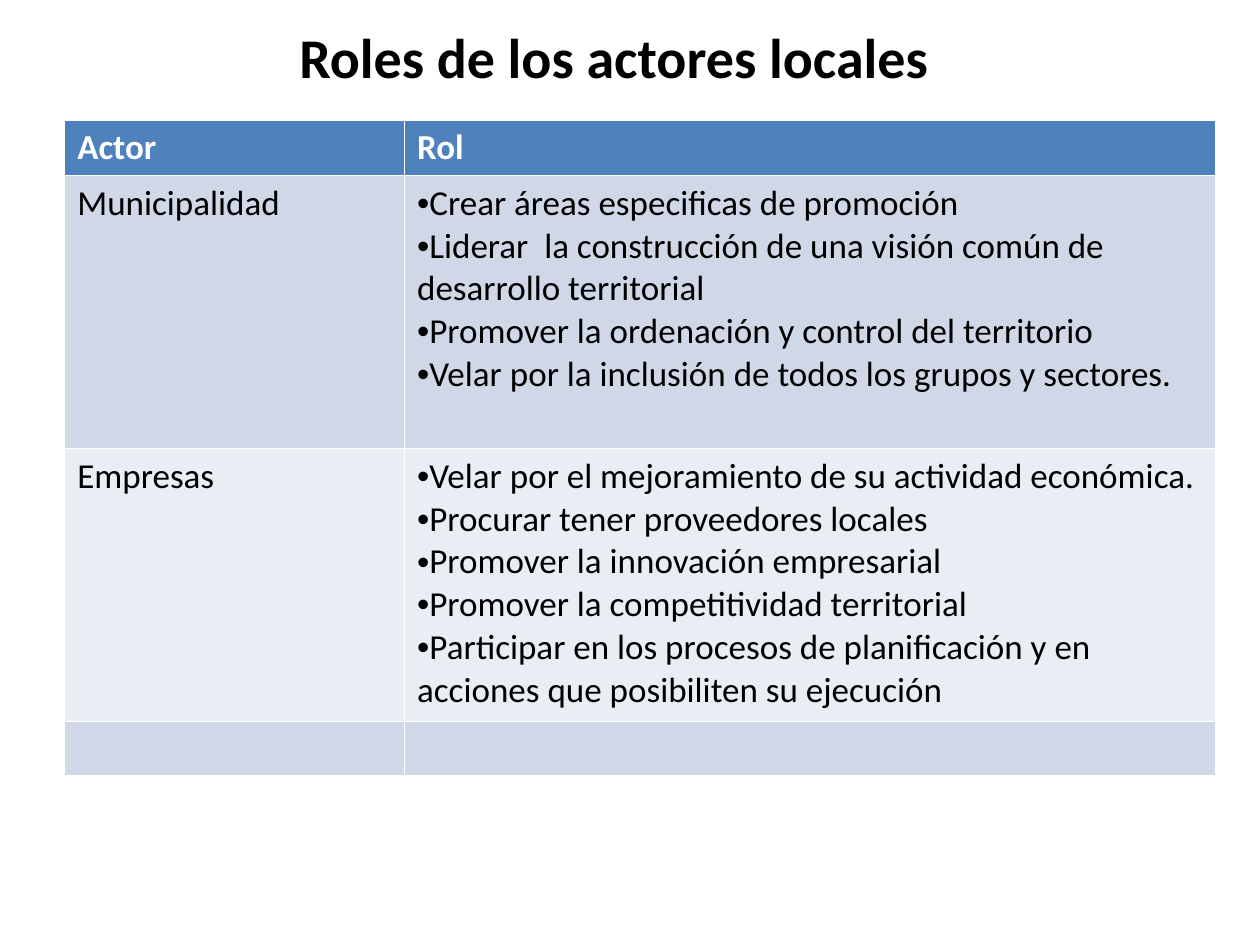
from pptx import Presentation
from pptx.dml.color import RGBColor
from pptx.enum.text import MSO_ANCHOR, PP_ALIGN
from pptx.oxml.ns import qn
from pptx.util import Pt
from lxml import etree

MIDDLE = MSO_ANCHOR.MIDDLE
CENTER = PP_ALIGN.CENTER
TITLE_ONLY = 5

THEME = {
    "font": "Calibri",
    "title": 32, "body": 20,
    "ink": "000000", "white": "FFFFFF",
    "head": "4F81BD", "bands": ("D0D8E8", "E9EDF4"),
}

TITLE = "Roles de los actores locales "
HEADS = ("Actor", "Rol")
ROLES = [
    ("Municipalidad", [
        "Crear áreas especificas de promoción",
        "Liderar  la construcción de una visión común de desarrollo territorial",
        "Promover la ordenación y control del territorio",
        "Velar por la inclusión de todos los grupos y sectores.",
    ]),
    ("Empresas", [
        "Velar por el mejoramiento de su actividad económica.",
        "Procurar tener proveedores locales",
        "Promover la innovación empresarial",
        "Promover la competitividad territorial",
        "Participar en los procesos de planificación y en  acciones que posibiliten su ejecución",
    ]),
    ("", []),
]

TITLE_BOX = (144.5, 3.5, 420, 57)
LEFT, TOP = 37, 68.6
COLS = (194.2, 463.6)
LOW, TALL = 31, 156


def add_run(para, text, size, color, bold=False):
    run = para.add_run()
    run.text = text
    font = run.font
    font.name = THEME["font"]
    font.size = Pt(size)
    font.bold = bold
    font.color.rgb = RGBColor.from_string(color)


def add_bullet(para):
    """Put a bullet right before the text, with no hanging indent."""
    props = para._p.get_or_add_pPr()
    props.set("marL", "0")
    props.set("indent", "0")
    etree.SubElement(props, qn("a:buFont")).set("typeface", "Arial")
    etree.SubElement(props, qn("a:buChar")).set("char", "•")


def fill_cell(cell, lines, fill, color, bold=False, bullets=False):
    cell.fill.solid()
    cell.fill.fore_color.rgb = RGBColor.from_string(fill)
    frame = cell.text_frame
    for i, line in enumerate(lines):
        para = frame.add_paragraph() if i else frame.paragraphs[0]
        if bullets:
            add_bullet(para)
        add_run(para, line, THEME["body"], color, bold)


def add_title(slide):
    title = slide.shapes.title
    title.left, title.top, title.width, title.height = map(Pt, TITLE_BOX)
    frame = title.text_frame
    frame.vertical_anchor = MIDDLE
    para = frame.paragraphs[0]
    para.alignment = CENTER
    add_run(para, TITLE, THEME["title"], THEME["ink"], True)


def add_roles(slide):
    highs = [LOW] + [TALL if roles else LOW for _, roles in ROLES]
    table = slide.shapes.add_table(
        len(highs), len(COLS), Pt(LEFT), Pt(TOP),
        Pt(sum(COLS)), Pt(sum(highs))).table
    for col, width in zip(table.columns, COLS):
        col.width = Pt(width)
    for row, high in zip(table.rows, highs):
        row.height = Pt(high)

    for col, head in enumerate(HEADS):
        fill_cell(table.cell(0, col), [head], THEME["head"], THEME["white"], True)
    for i, (actor, roles) in enumerate(ROLES):
        band = THEME["bands"][i % 2]
        names = [actor] if actor else []
        fill_cell(table.cell(i + 1, 0), names, band, THEME["ink"])
        fill_cell(table.cell(i + 1, 1), roles, band, THEME["ink"], bullets=True)


def main():
    deck = Presentation()
    deck.slide_width, deck.slide_height = Pt(720), Pt(540)
    slide = deck.slides.add_slide(deck.slide_layouts[TITLE_ONLY])
    add_title(slide)
    add_roles(slide)
    deck.save("out.pptx")


if __name__ == "__main__":
    main()
